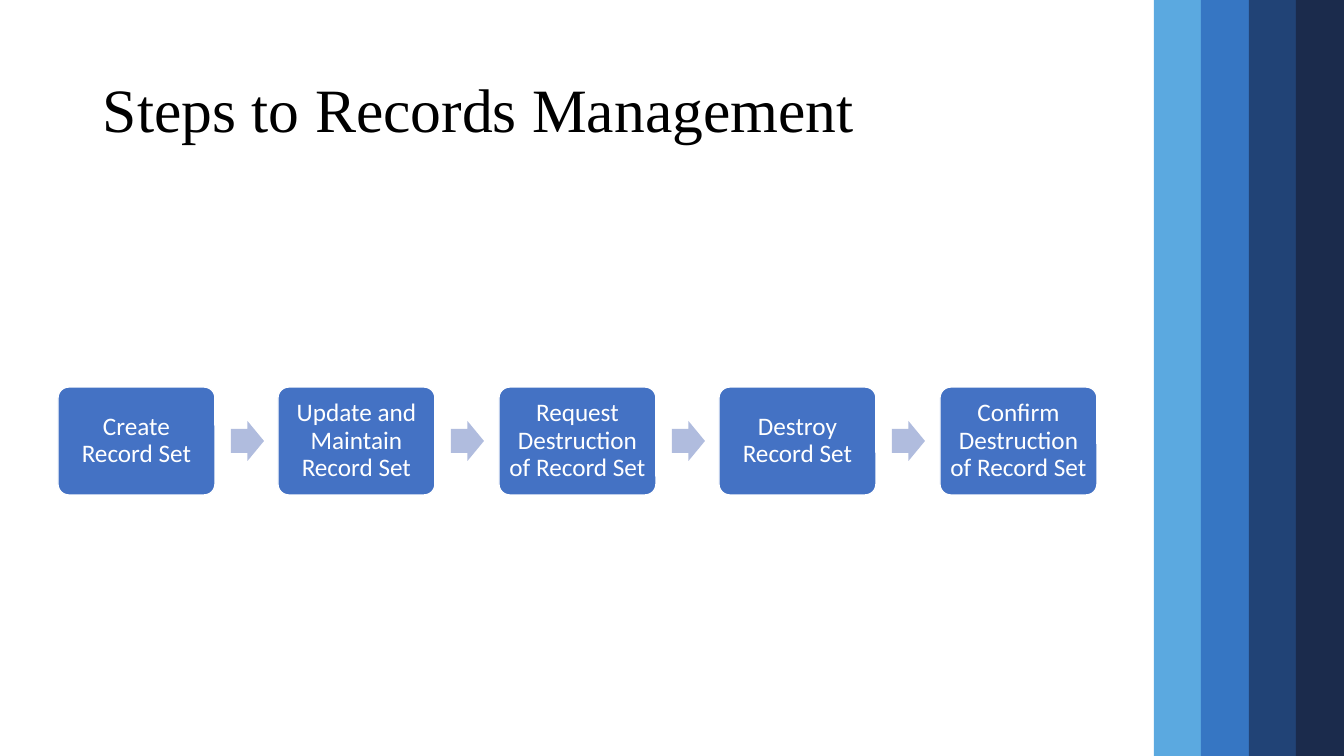
import pptx
import pptx.dml.color
import pptx.enum.shapes
import pptx.enum.text
import pptx.util

RGBColor = pptx.dml.color.RGBColor
Shape = pptx.enum.shapes.MSO_SHAPE
Align = pptx.enum.text.PP_ALIGN

BLACK = RGBColor(0x00, 0x00, 0x00)
WHITE = RGBColor(0xFF, 0xFF, 0xFF)
STEP_BLUE = RGBColor(0x44, 0x72, 0xC4)
ARROW_BLUE = RGBColor(0xB0, 0xBC, 0xDE)
STRIPE_COLORS = [
    RGBColor(0x5B, 0xA9, 0xE0),
    RGBColor(0x36, 0x76, 0xC3),
    RGBColor(0x21, 0x43, 0x76),
    RGBColor(0x1B, 0x2B, 0x4C),
]

EMU_PER_PX = 914400 / 100.8
SLIDE_WIDTH, SLIDE_HEIGHT = 1344, 756
STRIPES_LEFT = 1154
FIRST_STEP_LEFT, LAST_STEP_LEFT = 58, 940
STEP_TOP, STEP_WIDTH, STEP_HEIGHT = 387, 157, 108
ARROW_OFFSET, ARROW_WIDTH, ARROW_HEIGHT = 173, 33, 40

STEPS = [
    "Create Record Set",
    "Update and Maintain Record Set",
    "Request Destruction of Record Set",
    "Destroy Record Set",
    "Confirm Destruction of Record Set",
]


def px(length):
    return pptx.util.Emu(round(length * EMU_PER_PX))


class SlideBuilder:
    def __init__(self, slide):
        self.slide = slide

    def set_text(self, shape, text, font_name, size, color, align, inset):
        frame = shape.text_frame
        frame.word_wrap = True
        frame.vertical_anchor = pptx.enum.text.MSO_ANCHOR.MIDDLE
        frame.margin_left = frame.margin_right = px(inset)
        frame.margin_top = frame.margin_bottom = px(inset)
        paragraph = frame.paragraphs[0]
        paragraph.text = text
        paragraph.alignment = align
        paragraph.line_spacing = 0.9
        paragraph.font.name = font_name
        paragraph.font.size = pptx.util.Pt(size)
        paragraph.font.color.rgb = color

    def title(self, text, left, top, width, height):
        box = self.slide.shapes.add_textbox(px(left), px(top), px(width), px(height))
        self.set_text(box, text, "Times New Roman", 44, BLACK, Align.LEFT, 10)

    def shape(self, kind, left, top, width, height, color, adjustments=()):
        shape = self.slide.shapes.add_shape(
            kind, px(left), px(top), px(width), px(height))
        shape.shadow.inherit = False
        shape.fill.solid()
        shape.fill.fore_color.rgb = color
        shape.line.fill.background()
        for index, value in enumerate(adjustments):
            shape.adjustments[index] = value
        return shape

    def step(self, text, left):
        box = self.shape(Shape.ROUNDED_RECTANGLE, left, STEP_TOP,
                         STEP_WIDTH, STEP_HEIGHT, STEP_BLUE, [0.1])
        box.line.color.rgb = WHITE
        box.line.width = pptx.util.Pt(1)
        self.set_text(box, text, "Calibri", 18, WHITE, Align.CENTER, 7)

    def arrow(self, left):
        top = STEP_TOP + (STEP_HEIGHT - ARROW_HEIGHT) // 2
        self.shape(Shape.RIGHT_ARROW, left, top, ARROW_WIDTH, ARROW_HEIGHT,
                   ARROW_BLUE, [0.6, 0.5])


def main():
    presentation = pptx.Presentation()
    presentation.slide_width = px(SLIDE_WIDTH)
    presentation.slide_height = px(SLIDE_HEIGHT)
    builder = SlideBuilder(presentation.slides.add_slide(presentation.slide_layouts[6]))

    builder.title("Steps to Records Management", 93, 40, 1159, 146)

    # Stripes along the right edge
    stripes_width = SLIDE_WIDTH - STRIPES_LEFT
    for index, color in enumerate(STRIPE_COLORS):
        left = STRIPES_LEFT + index * stripes_width // len(STRIPE_COLORS)
        builder.shape(Shape.RECTANGLE, left, 0, 48, SLIDE_HEIGHT, color)

    # Evenly spaced steps with an arrow between neighbours
    gaps = len(STEPS) - 1
    for index, text in enumerate(STEPS):
        left = FIRST_STEP_LEFT + index * (LAST_STEP_LEFT - FIRST_STEP_LEFT) // gaps
        builder.step(text, left)
        if index < gaps:
            builder.arrow(left + ARROW_OFFSET)

    presentation.save("out.pptx")


if __name__ == "__main__":
    main()
